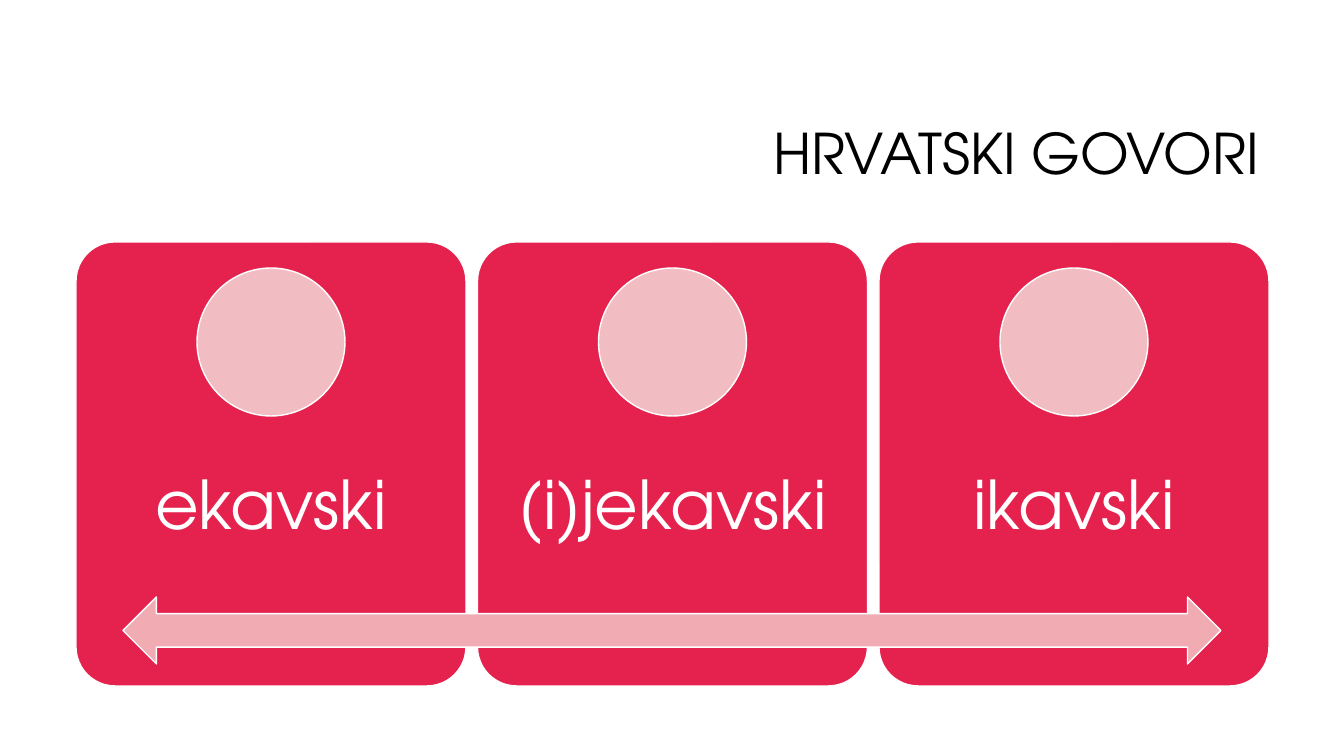
from pptx import Presentation
from pptx.dml.color import RGBColor
from pptx.enum.shapes import MSO_SHAPE
from pptx.enum.text import MSO_ANCHOR, PP_ALIGN
from pptx.util import Pt

TITLE = "HRVATSKI GOVORI"
DIALECTS = ["ekavski", "(i)jekavski", "ikavski"]
FONT = "TeX Gyre Adventor"
RED, PALE, ROSE = "E5224E", "F2BDC2", "F0ACB2"
WHITE, BLACK = "FFFFFF", "000000"

SLIDE_W, SLIDE_H = 1344, 756
ROW_LEFT, ROW_RIGHT = 76, 1269
CARD_TOP, CARD_W, CARD_H = 242, 390, 444
CIRCLE_TOP, CIRCLE_SIZE = 268, 148
LABEL_TOP, LABEL_H, LABEL_INSET = 419, 177, 37
TITLE_BOX = (320, 85, 949, 142)
ARROW_BOX = (123, 597, 1098, 67)


def px(length):
    return round(length * 914400 / 100.8)


def color(value):
    return RGBColor.from_string(value)


def add_figure(slide, preset, box, fill):
    figure = slide.shapes.add_shape(preset, *map(px, box))
    figure.shadow.inherit = False
    figure.fill.solid()
    figure.fill.fore_color.rgb = color(fill)
    figure.line.color.rgb = color(WHITE)
    figure.line.width = Pt(1)
    return figure


def add_text(slide, text, box, *, size, ink, align, inset_x=10, inset_y=5):
    frame = slide.shapes.add_textbox(*map(px, box)).text_frame
    frame.word_wrap = True
    frame.vertical_anchor = MSO_ANCHOR.MIDDLE
    frame.margin_left = frame.margin_right = px(inset_x)
    frame.margin_top = frame.margin_bottom = px(inset_y)
    line = frame.paragraphs[0]
    line.alignment = align
    line.line_spacing = 0.9
    run = line.add_run()
    run.text = text
    run.font.name = FONT
    run.font.size = Pt(size)
    run.font.color.rgb = color(ink)


def main():
    deck = Presentation()
    deck.slide_width, deck.slide_height = px(SLIDE_W), px(SLIDE_H)
    slide = deck.slides.add_slide(deck.slide_layouts[6])

    add_text(slide, TITLE, TITLE_BOX, size=40, ink=BLACK, align=PP_ALIGN.RIGHT)

    pitch = (ROW_RIGHT - ROW_LEFT - CARD_W) / (len(DIALECTS) - 1)
    for index, dialect in enumerate(DIALECTS):
        left = ROW_LEFT + index * pitch
        card = add_figure(slide, MSO_SHAPE.ROUNDED_RECTANGLE,
                          (left, CARD_TOP, CARD_W, CARD_H), RED)
        card.adjustments[0] = 0.1
        add_text(slide, dialect, (left, LABEL_TOP, CARD_W, LABEL_H),
                 size=48, ink=WHITE, align=PP_ALIGN.CENTER,
                 inset_x=LABEL_INSET, inset_y=LABEL_INSET)
        circle_left = left + (CARD_W - CIRCLE_SIZE) / 2
        add_figure(slide, MSO_SHAPE.OVAL,
                   (circle_left, CIRCLE_TOP, CIRCLE_SIZE, CIRCLE_SIZE), PALE)

    add_figure(slide, MSO_SHAPE.LEFT_RIGHT_ARROW, ARROW_BOX, ROSE)
    deck.save("out.pptx")


if __name__ == "__main__":
    main()
